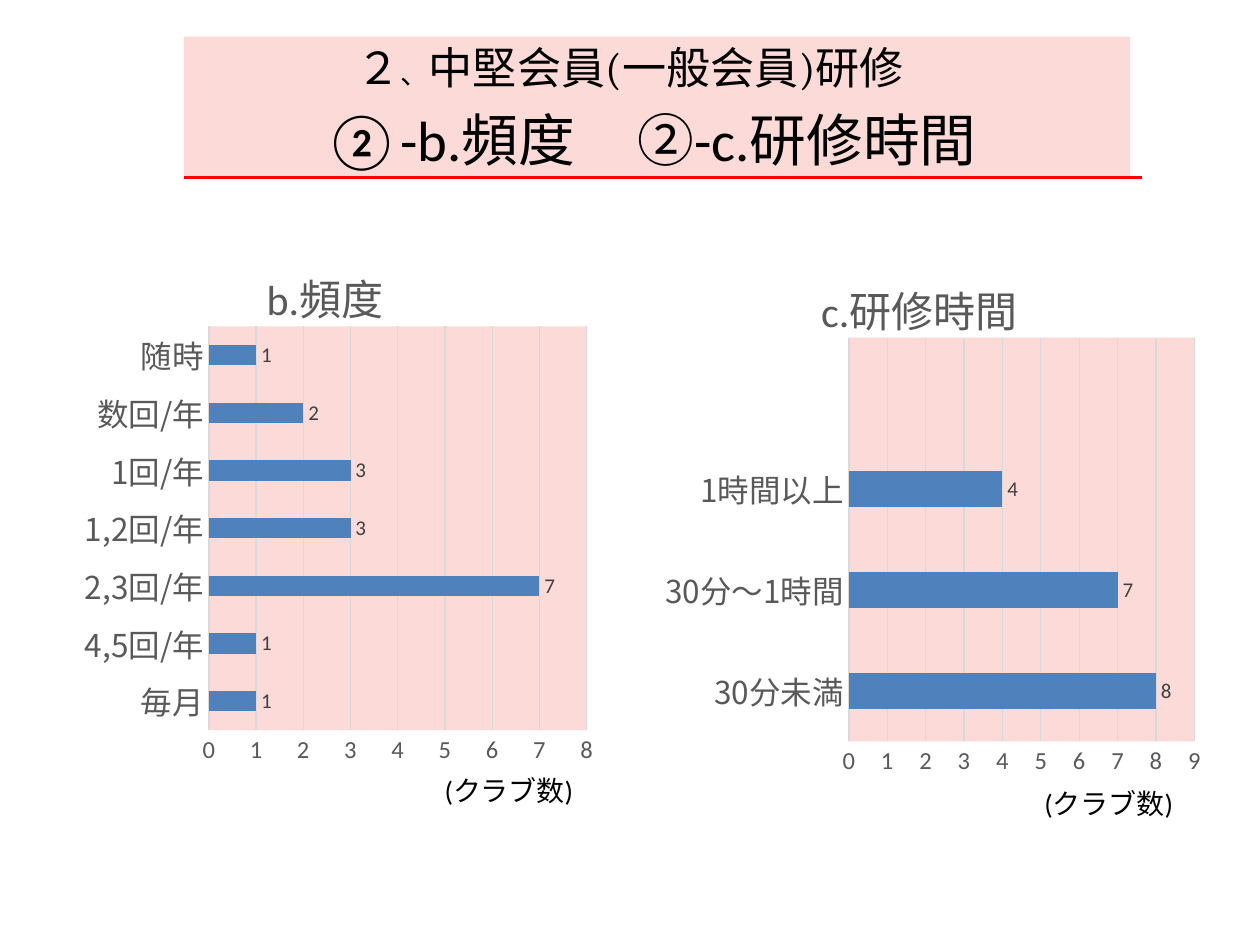
from dataclasses import dataclass

from pptx import Presentation
from pptx.chart.data import CategoryChartData
from pptx.dml.color import RGBColor
from pptx.enum.chart import XL_CHART_TYPE, XL_LABEL_POSITION, XL_TICK_MARK
from pptx.enum.shapes import MSO_CONNECTOR, MSO_SHAPE
from pptx.enum.text import MSO_ANCHOR, PP_ALIGN
from pptx.oxml import parse_xml
from pptx.oxml.ns import nsdecls, qn
from pptx.util import Inches, Pt

BAR = XL_CHART_TYPE.BAR_CLUSTERED
OUTSIDE_END = XL_LABEL_POSITION.OUTSIDE_END
NO_TICK = XL_TICK_MARK.NONE
STRAIGHT = MSO_CONNECTOR.STRAIGHT
RECTANGLE = MSO_SHAPE.RECTANGLE
MIDDLE = MSO_ANCHOR.MIDDLE
LEFT = PP_ALIGN.LEFT


@dataclass(frozen=True)
class Theme:
    panel: str = "FBDAD7"
    rule: str = "FF0000"
    bar: str = "4F81BD"
    grid: str = "D9D9D9"
    text: str = "000000"
    axis_text: str = "595959"
    label_text: str = "404040"
    latin: str = "Calibri"
    serif: str = "Cambria"
    japanese: str = "Noto Sans CJK JP"
    heading: float = 25.2
    comma: float = 16.2
    subheading: float = 32.4
    chart_title: float = 24
    category: float = 18
    note: float = 16
    value: float = 14
    label: float = 12


theme = Theme()
deck = Presentation()
deck.slide_width, deck.slide_height = Inches(10), Inches(7.5)
page = deck.slides.add_slide(deck.slide_layouts[6])


def place(*percents):
    """Turn alternating x, y percentages of the slide into lengths."""
    sides = (deck.slide_width, deck.slide_height)
    return [round(sides[i % 2] * share / 100) for i, share in enumerate(percents)]


def set_font(font, size, color=theme.text, name=theme.latin):
    font.size, font.name, font.bold = Pt(size), name, False
    font.color.rgb = RGBColor.from_string(color)


# Heading panel
panel = page.shapes.add_shape(RECTANGLE, *place(14.6, 3.87, 75.1, 14.8))
panel.shadow.inherit = False
panel.fill.solid()
panel.fill.fore_color.rgb = RGBColor.from_string(theme.panel)
panel.line.fill.background()
panel.text_frame.word_wrap = True
panel.text_frame.vertical_anchor = MIDDLE

heading_lines = [
    (1.27, 5, [("２", theme.heading, theme.latin),
               ("、", theme.comma, theme.latin),
               ("中堅会員(一般会員)研修", theme.heading, theme.serif)]),
    (1.02, 6.5, [("②-b.頻度\t②-c.研修時間", theme.subheading, theme.latin)]),
]
for row, (indent, space, spans) in enumerate(heading_lines):
    para = panel.text_frame.paragraphs[0] if row == 0 else panel.text_frame.add_paragraph()
    para.alignment = LEFT
    para.space_before = Pt(space)
    properties = para._p.get_or_add_pPr()
    properties.set("marL", "0")
    properties.set("indent", str(Inches(indent)))
    if row == 1:
        properties.append(parse_xml(
            f'<a:tabLst {nsdecls("a")}><a:tab pos="{Inches(3.97)}" algn="l"/></a:tabLst>'))
    for text, size, name in spans:
        span = para.add_run()
        span.text = text
        set_font(span.font, size, name=name)

# Rule under the heading
rule = page.shapes.add_connector(STRAIGHT, *place(14.6, 18.8, 90.6, 18.8))
rule.line.color.rgb = RGBColor.from_string(theme.rule)
rule.line.width = Pt(1.5)
rule._element.spPr.append(parse_xml(f'<a:effectLst {nsdecls("a")}/>'))

# Charts: title, frame, unit note, title and plot shares, axis maximum, data
charts = [
    ("b.頻度", (3.8, 24, 44.1, 58.53), (34.3, 81.2, 17.3, 4.93),
     {"x": 0.38, "y": 0.05}, {"x": 0.29, "y": 0.18, "w": 0.68, "h": 0.73}, 8,
     {"毎月": 1, "4,5回/年": 1, "2,3回/年": 7, "1,2回/年": 3,
      "1回/年": 3, "数回/年": 2, "随時": 1}),
    ("c.研修時間", (49.7, 25.2, 46.5, 58.53), (81.9, 82.53, 17.3, 4.93),
     {"x": 0.32, "y": 0.05}, {"x": 0.38, "y": 0.18, "w": 0.59, "h": 0.73}, 9,
     {"30分未満": 8, "30分～1時間": 7, "1時間以上": 4, "": None}),
]
for title, frame, note_frame, title_spot, plot_spot, maximum, counts in charts:
    data = CategoryChartData()
    data.categories = list(counts)
    data.add_series("Series 1", list(counts.values()))
    chart = page.shapes.add_chart(BAR, *place(*frame), data).chart
    set_font(chart.font, 10)
    chart.has_legend = False

    # Title
    chart.has_title = True
    span = chart.chart_title.text_frame.paragraphs[0].add_run()
    span.text = title
    set_font(span.font, theme.chart_title, theme.axis_text)

    # Bars and value labels
    plot = chart.plots[0]
    plot.gap_width = 182
    plot.vary_by_categories = False
    series = plot.series[0]
    series.format.fill.solid()
    series.format.fill.fore_color.rgb = RGBColor.from_string(theme.bar)
    labels = series.data_labels
    labels.show_value = True
    labels.position = OUTSIDE_END
    set_font(labels.font, theme.label, theme.label_text)

    # Axes
    categories, values = chart.category_axis, chart.value_axis
    for axis in (categories, values):
        axis.major_tick_mark = axis.minor_tick_mark = NO_TICK
    set_font(categories.tick_labels.font, theme.category, theme.axis_text, theme.japanese)
    set_font(values.tick_labels.font, theme.value, theme.axis_text)
    values.minimum_scale, values.maximum_scale, values.major_unit = 0, maximum, 1
    values.format.line.fill.background()
    values.has_major_gridlines = True
    for line in (categories.format.line, values.major_gridlines.format.line):
        line.color.rgb = RGBColor.from_string(theme.grid)
        line.width = Pt(0.75)

    # Title and plot positions, plot background
    plot_area = chart._chartSpace.chart.plotArea
    spots = [(chart.chart_title._element, 1, "", title_spot),
             (plot_area, 0, '<c:layoutTarget val="inner"/>', plot_spot)]
    for parent, index, target, spot in spots:
        for old in parent.findall(qn("c:layout")):
            parent.remove(old)
        modes = "".join(f'<c:{side}Mode val="edge"/>' for side in "xy")
        shares = "".join(f'<c:{side} val="{share}"/>' for side, share in spot.items())
        parent.insert(index, parse_xml(
            f'<c:layout {nsdecls("c")}><c:manualLayout>{target}{modes}{shares}'
            "</c:manualLayout></c:layout>"))
    plot_area.append(parse_xml(
        f'<c:spPr {nsdecls("c", "a")}><a:solidFill><a:srgbClr val="{theme.panel}"/>'
        "</a:solidFill></c:spPr>"))

    # Unit note
    note = page.shapes.add_textbox(*place(*note_frame))
    note.text_frame.word_wrap = True
    span = note.text_frame.paragraphs[0].add_run()
    span.text = "(クラブ数)"
    set_font(span.font, theme.note)

deck.save("out.pptx")
